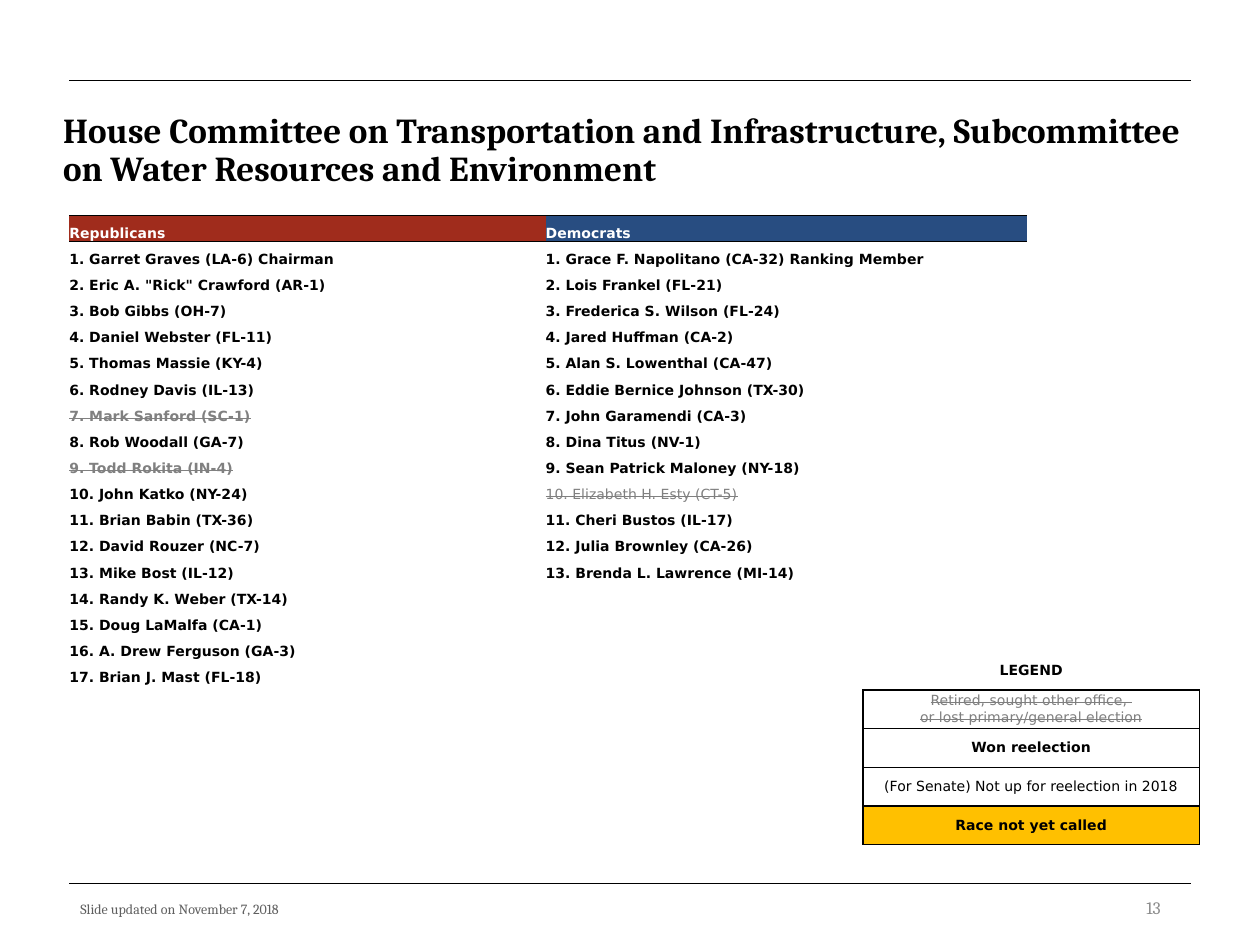
from lxml import etree
from pptx import Presentation
from pptx.dml.color import RGBColor
from pptx.enum.shapes import MSO_CONNECTOR
from pptx.enum.text import MSO_ANCHOR, MSO_AUTO_SIZE, PP_ALIGN
from pptx.oxml.ns import qn
from pptx.util import Pt

COLORS = {
    "black": "000000",
    "white": "FFFFFF",
    "republican": "A02C1C",
    "democrat": "284D81",
    "departed": "808080",
    "legend_departed": "7F7F7F",
    "undecided": "FFC000",
    "footer": "5F5F5F",
    "number": "8C8C8C",
}
SERIF = "Cambria"
SANS = "DejaVu Sans"

REPUBLICANS = [
    "Garret Graves (LA-6) Chairman", 'Eric A. "Rick" Crawford (AR-1)',
    "Bob Gibbs (OH-7)", "Daniel Webster (FL-11)", "Thomas Massie (KY-4)",
    "Rodney Davis (IL-13)", "Mark Sanford (SC-1)", "Rob Woodall (GA-7)",
    "Todd Rokita (IN-4)", "John Katko (NY-24)", "Brian Babin (TX-36)",
    "David Rouzer (NC-7)", "Mike Bost (IL-12)", "Randy K. Weber (TX-14)",
    "Doug LaMalfa (CA-1)", "A. Drew Ferguson (GA-3)", "Brian J. Mast (FL-18)",
]
DEMOCRATS = [
    "Grace F. Napolitano (CA-32) Ranking Member", "Lois Frankel (FL-21)",
    "Frederica S. Wilson (FL-24)", "Jared Huffman (CA-2)",
    "Alan S. Lowenthal (CA-47)", "Eddie Bernice Johnson (TX-30)",
    "John Garamendi (CA-3)", "Dina Titus (NV-1)",
    "Sean Patrick Maloney (NY-18)", "Elizabeth H. Esty (CT-5)",
    "Cheri Bustos (IL-17)", "Julia Brownley (CA-26)",
    "Brenda L. Lawrence (MI-14)",
]
# Departed members, with whether the name is bold
DEPARTED = {
    "Mark Sanford (SC-1)": True,
    "Todd Rokita (IN-4)": True,
    "Elizabeth H. Esty (CT-5)": False,
}


def add_run(paragraph, text, font_name, size, color, bold=False, strike=False):
    run = paragraph.add_run()
    run.text = text
    font = run.font
    font.name = font_name
    font.size = Pt(size)
    font.bold = bold
    font.color.rgb = RGBColor.from_string(COLORS[color])
    if strike:
        font._element.set("strike", "sngStrike")


def set_borders(cell, **widths):
    """Draw the named sides (L, R, T, B) in black and clear the others."""
    properties = cell._tc.get_or_add_tcPr()
    for side in "LRTB":
        line = etree.SubElement(properties, qn(f"a:ln{side}"))
        if side in widths:
            line.set("w", str(Pt(widths[side])))
            fill = etree.SubElement(line, qn("a:solidFill"))
            etree.SubElement(fill, qn("a:srgbClr"), val=COLORS["black"])
        else:
            etree.SubElement(line, qn("a:noFill"))


def format_cell(cell, anchor, horizontal, vertical, borders, fill=None):
    cell.vertical_anchor = anchor
    cell.margin_left = cell.margin_right = Pt(horizontal)
    cell.margin_top = cell.margin_bottom = Pt(vertical)
    set_borders(cell, **borders)
    if fill:
        cell.fill.solid()
        cell.fill.fore_color.rgb = RGBColor.from_string(COLORS[fill])
    else:
        cell.fill.background()


def add_plain_table(slide, rows, column_widths, left, top, height):
    frame = slide.shapes.add_table(rows, len(column_widths), Pt(left), Pt(top),
                                   Pt(sum(column_widths)), Pt(height))
    table = frame.table
    table.first_row = table.horz_banding = False
    for column, width in zip(table.columns, column_widths):
        column.width = Pt(width)
    for row in table.rows:
        row.height = Pt(height / rows)
    return table


def add_rule(slide, left, top, width):
    rule = slide.shapes.add_connector(MSO_CONNECTOR.STRAIGHT, Pt(left), Pt(top),
                                      Pt(left + width), Pt(top))
    rule.line.color.rgb = RGBColor.from_string(COLORS["black"])
    rule.line.width = Pt(0.5)
    etree.SubElement(rule._element.spPr, qn("a:effectLst"))


def add_label(slide, text, left, top, width, height, size, color,
              alignment=PP_ALIGN.LEFT, anchor=MSO_ANCHOR.TOP):
    frame = slide.shapes.add_textbox(Pt(left), Pt(top), Pt(width), Pt(height)).text_frame
    frame.word_wrap = True
    frame.vertical_anchor = anchor
    paragraph = frame.paragraphs[0]
    paragraph.alignment = alignment
    add_run(paragraph, text, SERIF, size, color)


def fill_title(slide, left, top, width, height):
    title = slide.shapes.title
    title.left, title.top, title.width, title.height = map(Pt, (left, top, width, height))
    frame = title.text_frame
    frame.word_wrap = True
    frame.auto_size = MSO_AUTO_SIZE.NONE
    frame.vertical_anchor = MSO_ANCHOR.MIDDLE
    paragraph = frame.paragraphs[0]
    paragraph.alignment = PP_ALIGN.LEFT
    paragraph.line_spacing = 0.9
    add_run(paragraph, "House Committee on Transportation and Infrastructure, "
            "Subcommittee on Water Resources and Environment", SERIF, 20, "black", True)


def add_members(slide, left, top, width, height):
    parties = [("Republicans", "republican", REPUBLICANS),
               ("Democrats", "democrat", DEMOCRATS)]
    first_width = 272.2
    row_count = 1 + max(len(members) for _, _, members in parties)
    table = add_plain_table(slide, row_count, [first_width, width - first_width],
                            left, top, height)
    for column, (party, party_color, members) in enumerate(parties):
        # Party heading
        heading = table.cell(0, column)
        format_cell(heading, MSO_ANCHOR.BOTTOM, 0, 0, {"T": 0.5, "B": 0.5}, party_color)
        add_run(heading.text_frame.paragraphs[0], party, SANS, 8, "white", True)
        # Numbered members
        for row in range(1, row_count):
            cell = table.cell(row, column)
            format_cell(cell, MSO_ANCHOR.BOTTOM, 0, 0, {"T": 0.5} if row == 1 else {})
            paragraph = cell.text_frame.paragraphs[0]
            if row > len(members):
                # Small end mark keeps an empty row from growing
                etree.SubElement(paragraph._p, qn("a:endParaRPr"), sz="800")
                continue
            name = members[row - 1]
            departed = name in DEPARTED
            add_run(paragraph, f"{row}. {name}", SANS, 8,
                    "departed" if departed else "black",
                    DEPARTED.get(name, True), departed)


def add_legend(slide, left, top, width, height):
    # Lines, colour, bold, strike, fill
    entries = [
        (["LEGEND"], "black", True, False, None),
        (["Retired, sought other office, ", "or lost primary/general election"],
         "legend_departed", False, True, None),
        (["Won reelection"], "black", True, False, None),
        (["(For Senate) Not up for reelection in 2018"], "black", False, False, None),
        (["Race not yet called"], "black", True, False, "undecided"),
    ]
    table = add_plain_table(slide, len(entries), [width], left, top, height)
    for row, (lines, color, bold, strike, fill) in enumerate(entries):
        cell = table.cell(row, 0)
        borders = dict.fromkeys("LRTB" if row else "B", 1)
        format_cell(cell, MSO_ANCHOR.MIDDLE, 2.88, 1.44, borders, fill)
        frame = cell.text_frame
        for index, line in enumerate(lines):
            paragraph = frame.add_paragraph() if index else frame.paragraphs[0]
            paragraph.alignment = PP_ALIGN.CENTER
            add_run(paragraph, line, SANS, 8, color, bold, strike)


def main():
    presentation = Presentation()
    presentation.slide_width, presentation.slide_height = Pt(720), Pt(540)
    slide = presentation.slides.add_slide(presentation.slide_layouts[5])

    # Frame rules and footer
    for top in (504.7, 46.1):
        add_rule(slide, 39.6, top, 640.8)
    add_label(slide, "Slide updated on November 7, 2018", 38.9, 511.2, 316.8, 17.3,
              8, "footer")
    add_label(slide, "13", 508.3, 508.3, 162, 20.9, 10, "number",
              PP_ALIGN.RIGHT, MSO_ANCHOR.MIDDLE)

    # Title and tables
    fill_title(slide, 28.8, 61.2, 662.4, 50.4)
    add_legend(slide, 493.2, 372.2, 192.2, 110.5)
    add_members(slide, 39.6, 123.1, 547.2, 269.3)
    presentation.save("out.pptx")


if __name__ == "__main__":
    main()
